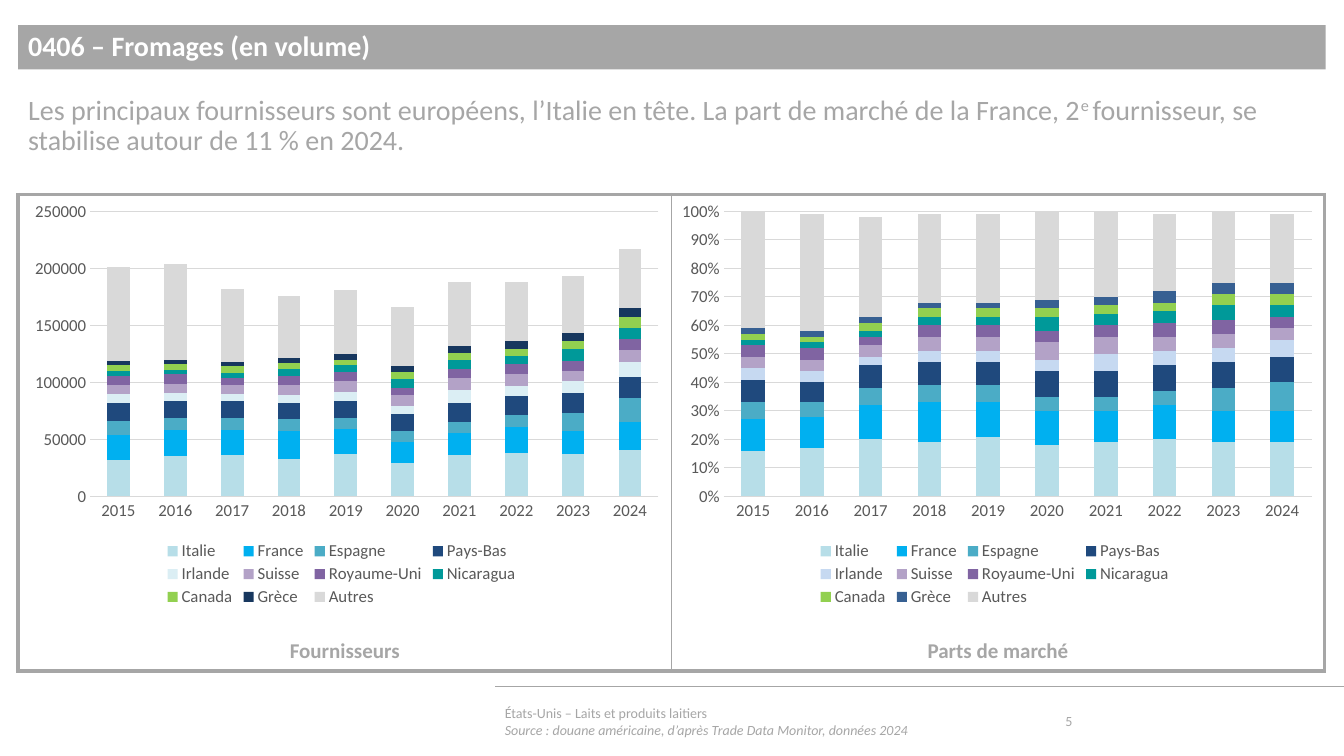
from dataclasses import dataclass

from lxml import etree
from pptx import Presentation
from pptx import chart as _chart
from pptx.chart.data import CategoryChartData
from pptx.dml.color import RGBColor
from pptx.enum import chart as ec, shapes as es, text as et
from pptx.oxml import ns, xmlchemy as xc
from pptx.util import Pt

GREY = RGBColor(0xA6, 0xA6, 0xA6)
WHITE = RGBColor(0xFF, 0xFF, 0xFF)
LABEL = RGBColor(0x59, 0x59, 0x59)
GRID = RGBColor(0xD9, 0xD9, 0xD9)
FONT = "Calibri"
LEFT, TOP, PANEL_W, PANEL_H, CHART_H = 13, 139, 466.6, 340.5, 299.5
YEARS = [str(y) for y in range(2015, 2025)]


@dataclass
class Supplier:
    name: str
    volumes: list[int]  # thousands
    shares: list[int]  # per cent
    color: RGBColor
    share_color: RGBColor | None = None


@dataclass
class Panel:
    title: str
    series: list[tuple[str, list[float], RGBColor]]
    number_format: str
    maximum: float
    step: float
    plot_x: float
    plot_w: float


def rgb(code: str) -> RGBColor:
    return RGBColor.from_string(code)


SUPPLIERS = [
    Supplier("Italie", [32, 35, 36, 33, 37, 29, 36, 38, 37, 41],
             [16, 17, 20, 19, 21, 18, 19, 20, 19, 19], rgb("B7DEE8")),
    Supplier("France", [22, 23, 22, 24, 22, 19, 20, 23, 20, 24],
             [11, 11, 12, 14, 12, 12, 11, 12, 11, 11], rgb("00B0F0")),
    Supplier("Espagne", [12, 11, 11, 11, 10, 9, 9, 10, 16, 21],
             [6, 5, 6, 6, 6, 5, 5, 5, 8, 10], rgb("4BACC6")),
    Supplier("Pays-Bas", [16, 15, 15, 14, 15, 15, 17, 17, 18, 19],
             [8, 7, 8, 8, 8, 9, 9, 9, 9, 9], rgb("1F497D")),
    Supplier("Irlande", [8, 7, 6, 7, 8, 7, 11, 9, 10, 13],
             [4, 4, 3, 4, 4, 4, 6, 5, 5, 6], rgb("DBEEF4"), rgb("C6D9F1")),
    Supplier("Suisse", [8, 8, 8, 9, 9, 10, 11, 10, 9, 10],
             [4, 4, 4, 5, 5, 6, 6, 5, 5, 4], rgb("B3A2C7")),
    Supplier("Royaume-Uni", [8, 8, 6, 8, 8, 6, 8, 9, 9, 10],
             [4, 4, 3, 4, 4, 4, 4, 5, 5, 4], rgb("8064A2")),
    Supplier("Nicaragua", [4, 4, 4, 6, 6, 8, 8, 7, 10, 10],
             [2, 2, 2, 3, 3, 5, 4, 4, 5, 4], rgb("009999")),
    Supplier("Canada", [5, 5, 6, 5, 5, 6, 6, 6, 7, 9],
             [2, 2, 3, 3, 3, 3, 3, 3, 4, 4], rgb("92D050")),
    Supplier("Grèce", [4, 4, 4, 4, 5, 5, 6, 7, 7, 8],
             [2, 2, 2, 2, 2, 3, 3, 4, 4, 4], rgb("17375E"), rgb("376092")),
    Supplier("Autres", [82, 84, 64, 55, 56, 52, 56, 52, 50, 52],
             [41, 41, 35, 31, 31, 31, 30, 27, 26, 24], GRID),
]
PANELS = [
    Panel("Fournisseurs",
          [(s.name, [v * 1000 for v in s.volumes], s.color) for s in SUPPLIERS],
          "General", 250000, 50000, 0.11, 0.87),
    Panel("Parts de marché",
          [(s.name, [v / 100 for v in s.shares], s.share_color or s.color) for s in SUPPLIERS],
          "0%", 1, 0.1, 0.08, 0.9),
]


def set_font(font, size: float, color: RGBColor, bold: bool = False, italic: bool = False) -> None:
    font.name, font.size, font.bold, font.italic = FONT, Pt(size), bold, italic
    font.color.rgb = color


def add_text(slide, box: tuple, lines: list[str], size: float, color: RGBColor = GREY,
             bold: bool = False, centred: bool = False, middle: bool = False):
    sp = slide.shapes.add_textbox(*map(Pt, box))
    tf = sp.text_frame
    tf.word_wrap = True
    tf.vertical_anchor = et.MSO_ANCHOR.MIDDLE if middle else et.MSO_ANCHOR.TOP
    tf.text = "\n".join(lines)
    for p in tf.paragraphs:
        set_font(p.font, size, color, bold)
        p.alignment = et.PP_ALIGN.CENTER if centred else et.PP_ALIGN.LEFT
    return sp


def set_layout(element, successors: tuple, x: float, y: float, w: float, h: float,
               inner: bool = False) -> None:
    """Place a chart part by fractions of the chart frame."""
    for old in element.findall(ns.qn("c:layout")):
        element.remove(old)
    layout = etree.Element(ns.qn("c:layout"))
    manual = etree.SubElement(layout, ns.qn("c:manualLayout"))
    items = [("layoutTarget", "inner")] if inner else []
    items += [("xMode", "edge"), ("yMode", "edge"), ("x", x), ("y", y), ("w", w), ("h", h)]
    for tag, value in items:
        etree.SubElement(manual, ns.qn(f"c:{tag}")).set("val", str(value))
    follower = next(c for c in element if c.tag in [ns.qn(t) for t in successors])
    follower.addprevious(layout)


def add_panel_chart(slide, panel: Panel, left: float) -> None:
    data = CategoryChartData(number_format=panel.number_format)
    data.categories = YEARS
    for name, values, _ in panel.series:
        data.add_series(name, values)
    chart = slide.shapes.add_chart(ec.XL_CHART_TYPE.COLUMN_STACKED, Pt(left), Pt(TOP),
                                   Pt(PANEL_W), Pt(CHART_H), data).chart
    set_font(chart.font, 12, LABEL)
    chart.has_title = False
    plot = chart.plots[0]
    plot.gap_width, plot.overlap, plot.vary_by_categories = 150, 100, False
    for series, (_, _, color) in zip(plot.series, panel.series):
        series.format.fill.solid()
        series.format.fill.fore_color.rgb = color

    cats, vals = chart.category_axis, chart.value_axis
    for axis in (cats, vals):
        axis.major_tick_mark = axis.minor_tick_mark = ec.XL_TICK_MARK.NONE
        set_font(axis.tick_labels.font, 12, LABEL)
    vals.minimum_scale, vals.maximum_scale, vals.major_unit = 0, panel.maximum, panel.step
    vals.tick_labels.number_format = panel.number_format
    vals.tick_labels.number_format_is_linked = False
    vals.format.line.fill.background()
    for line in (cats.format.line, vals.major_gridlines.format.line):
        line.color.rgb, line.width = GRID, Pt(0.75)

    chart.has_legend = True
    legend = chart.legend
    legend.position, legend.include_in_layout = ec.XL_LEGEND_POSITION.BOTTOM, False
    set_font(legend.font, 12, LABEL)
    plot_area = chart.plots[0]._element.getparent()
    set_layout(plot_area, ("c:barChart",), panel.plot_x, 0.04, panel.plot_w, 0.68, True)
    set_layout(legend._element, ("c:overlay",), 0.22, 0.82, 0.55, 0.17)


def set_borders(cell, **widths: float) -> None:
    tc_pr = cell._tc.get_or_add_tcPr()
    for i, (side, width) in enumerate(widths.items()):
        ln = etree.Element(ns.qn(f"a:ln{side}"), w=str(Pt(width)))
        fill = etree.SubElement(ln, ns.qn("a:solidFill"))
        etree.SubElement(fill, ns.qn("a:srgbClr"), val=str(GREY))
        tc_pr.insert(i, ln)


def add_frame(slide) -> None:
    table = slide.shapes.add_table(1, 2, Pt(LEFT), Pt(TOP), Pt(2 * PANEL_W), Pt(PANEL_H)).table
    table.first_row = table.horz_banding = False
    for cell in table.iter_cells():
        cell.fill.background()
    set_borders(table.cell(0, 0), L=3, R=1, T=3, B=3)
    set_borders(table.cell(0, 1), L=1, R=3, T=3, B=3)


def main() -> None:
    prs = Presentation()
    prs.slide_width, prs.slide_height = Pt(960), Pt(540)
    s = prs.slides.add_slide(prs.slide_layouts[6])

    rule = s.shapes.add_connector(es.MSO_CONNECTOR.STRAIGHT, Pt(960), Pt(490.5), Pt(353.5), Pt(490.5))
    rule.line.color.rgb, rule.line.width = GREY, Pt(0.5)
    etree.SubElement(rule._element.spPr, ns.qn("a:effectLst"))
    add_frame(s)

    title = add_text(s, (LEFT, 18, 934, 31.5), ["0406 – Fromages (en volume)"], 20, WHITE, True, middle=True)
    title.fill.solid()
    title.fill.fore_color.rgb = GREY
    message = add_text(s, (LEFT, 65, 933, 58), [
        "Les principaux fournisseurs sont européens, l’Italie en tête. La part de marché de la France, 2"], 20)
    p = message.text_frame.paragraphs[0]
    for words, baseline in (("e ", "30000"), ("fournisseur, se stabilise autour de 11 % en 2024.", "0")):
        r = p.add_run()
        r.text = words
        r._r.get_or_add_rPr().set("baseline", baseline)
    for sp in (title, message):
        sp.text_frame.paragraphs[0].line_spacing = 0.9

    for i, panel in enumerate(PANELS):
        left = LEFT + i * PANEL_W
        add_panel_chart(s, panel, left)
        add_text(s, (left, 451.5, PANEL_W, 25.5), [panel.title], 15, bold=True, centred=True)

    source = add_text(s, (353.5, 500.5, 391, 29), [
        "États-Unis – Laits et produits laitiers",
        "Source : douane américaine, d’après Trade Data Monitor, données 2024"], 10, middle=True)
    source.text_frame.paragraphs[1].font.italic = True
    add_text(s, (754, 500.5, 71, 29), ["5"], 10, middle=True)
    prs.save("out.pptx")


if __name__ == "__main__":
    main()
